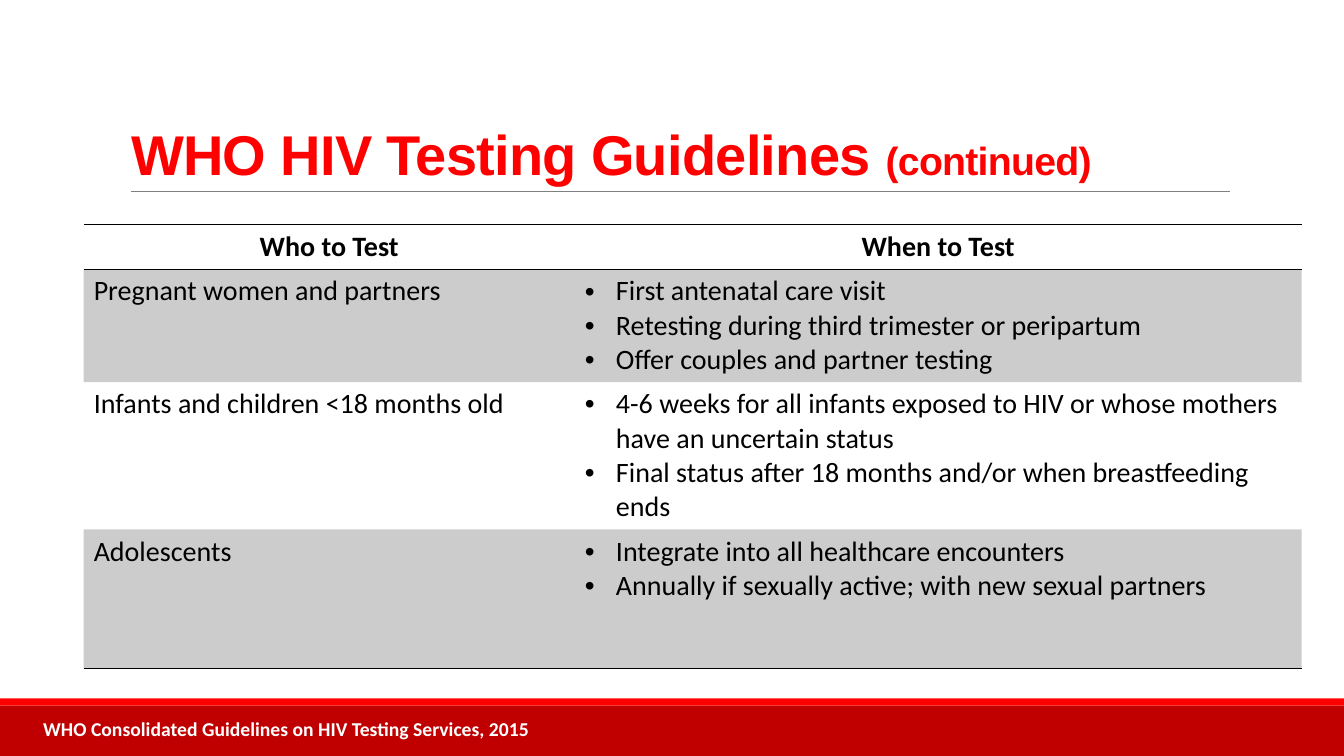
from lxml.etree import SubElement
from pptx import Presentation
from pptx.dml.color import RGBColor
from pptx.enum.shapes import MSO_CONNECTOR, MSO_SHAPE
from pptx.enum.text import MSO_ANCHOR, MSO_AUTO_SIZE, PP_ALIGN
from pptx.oxml.ns import qn
from pptx.util import Inches, Pt


def colour(target, hex_code):
    """Paint a fill solid, or set a font or line colour."""
    if hasattr(target, "solid"):
        target.solid()
        target.fore_color.rgb = RGBColor.from_string(hex_code)
    else:
        target.color.rgb = RGBColor.from_string(hex_code)


def write(paragraph, text, size=20, color="000000", bold=False,
          font="Calibri", align=PP_ALIGN.LEFT, spacing=None, bullet=None):
    """Add a run; spacing is in hundredths of a point."""
    paragraph.alignment = align
    if bullet:
        props = paragraph._p.get_or_add_pPr()
        props.set("marL", str(Inches(0.31)))
        props.set("indent", str(Inches(-0.31)))
        SubElement(props, qn("a:buFont")).set("typeface", "Arial")
        SubElement(props, qn("a:buChar")).set("char", bullet)
    run = paragraph.add_run()
    run.text = text
    run.font.size, run.font.bold, run.font.name = Pt(size), bold, font
    colour(run.font, color)
    if spacing:
        run._r.get_or_add_rPr().set("spc", str(spacing))


deck = Presentation()
deck.slide_width, deck.slide_height = Inches(13.33), Inches(7.5)
slide = deck.slides.add_slide(deck.slide_layouts[5])
shapes = slide.shapes

# Footer bands and title rule
for top, height, band_color in [(7, 0.5, "C00000"), (6.93, 0.07, "FF0000")]:
    band = shapes.add_shape(MSO_SHAPE.RECTANGLE, 0, Inches(top),
                            deck.slide_width, Inches(height))
    band.shadow.inherit = False
    colour(band.fill, band_color)
    band.line.fill.background()

title_rule = shapes.add_connector(MSO_CONNECTOR.STRAIGHT, Inches(1.3), Inches(1.9),
                                  Inches(12.2), Inches(1.9))
colour(title_rule.line, "808080")
title_rule.line.width = Pt(0.5)
SubElement(title_rule._element.spPr, qn("a:effectLst"))

# Title
title = shapes.title
title.left, title.top = Inches(1.2), Inches(0.31)
title.width, title.height = Inches(11), Inches(1.59)
title_frame = title.text_frame
title_frame.auto_size = MSO_AUTO_SIZE.NONE
title_frame.vertical_anchor = MSO_ANCHOR.BOTTOM
heading = title_frame.paragraphs[0]
heading.line_spacing = 0.85
for text, size in [("WHO HIV Testing Guidelines ", 40), ("(continued)", 28)]:
    write(heading, text, size=size, color="FF0000", bold=True, font="Arial", spacing=-50)

# Guideline table
guidelines = [
    ("Who to Test", ["When to Test"]),
    ("Pregnant women and partners",
     ["First antenatal care visit",
      "Retesting during third trimester or peripartum",
      "Offer couples and partner testing"]),
    ("Infants and children <18 months old",
     ["4-6 weeks for all infants exposed to HIV or whose mothers have an uncertain status",
      "Final status after 18 months and/or when breastfeeding ends"]),
    ("Adolescents",
     ["Integrate into all healthcare encounters",
      "Annually if sexually active; with new sexual partners"]),
]
row_heights = [0.41, 1.06, 1.38, 1.38]
ruled_edges = {0: ["a:lnT", "a:lnB"], 3: ["a:lnB"]}

table = shapes.add_table(len(guidelines), 2, Inches(0.83), Inches(2.23),
                         Inches(12.08), Inches(sum(row_heights))).table
table.horz_banding = False
# "No Style, No Grid"
table._tbl.tblPr.find(qn("a:tableStyleId")).text = "{2D5ABB26-0587-4C30-8999-92F81FD0307C}"
for column, width in zip(table.columns, [4.87, 7.21]):
    column.width = Inches(width)

for row, (who, when) in enumerate(guidelines):
    table.rows[row].height = Inches(row_heights[row])
    header = row == 0
    for col, lines in enumerate([[who], when]):
        cell = table.cell(row, col)
        cell_props = cell._tc.get_or_add_tcPr()
        for edge in ruled_edges.get(row, []):
            border = SubElement(cell_props, qn(edge), w=str(Pt(1)))
            border_fill = SubElement(border, qn("a:solidFill"))
            SubElement(border_fill, qn("a:srgbClr"), val="000000")
        if row % 2:
            colour(cell.fill, "000000")
            shade = cell_props.find(qn("a:solidFill")).find(qn("a:srgbClr"))
            SubElement(shade, qn("a:alpha"), val="20000")
        else:
            cell.fill.background()
        frame = cell.text_frame
        for index, line in enumerate(lines):
            paragraph = frame.add_paragraph() if index else frame.paragraphs[0]
            write(paragraph, line, bold=header,
                  align=PP_ALIGN.CENTER if header else PP_ALIGN.LEFT,
                  bullet="•" if col and not header else None)

# Citation
citation = shapes.add_textbox(Inches(0.33), Inches(7.06), Inches(5.06), Inches(0.34))
citation.text_frame.word_wrap = False
citation.text_frame.auto_size = MSO_AUTO_SIZE.SHAPE_TO_FIT_TEXT
write(citation.text_frame.paragraphs[0],
      "WHO Consolidated Guidelines on HIV Testing Services, 2015",
      size=14, color="FFFFFF", bold=True)

deck.save("out.pptx")
